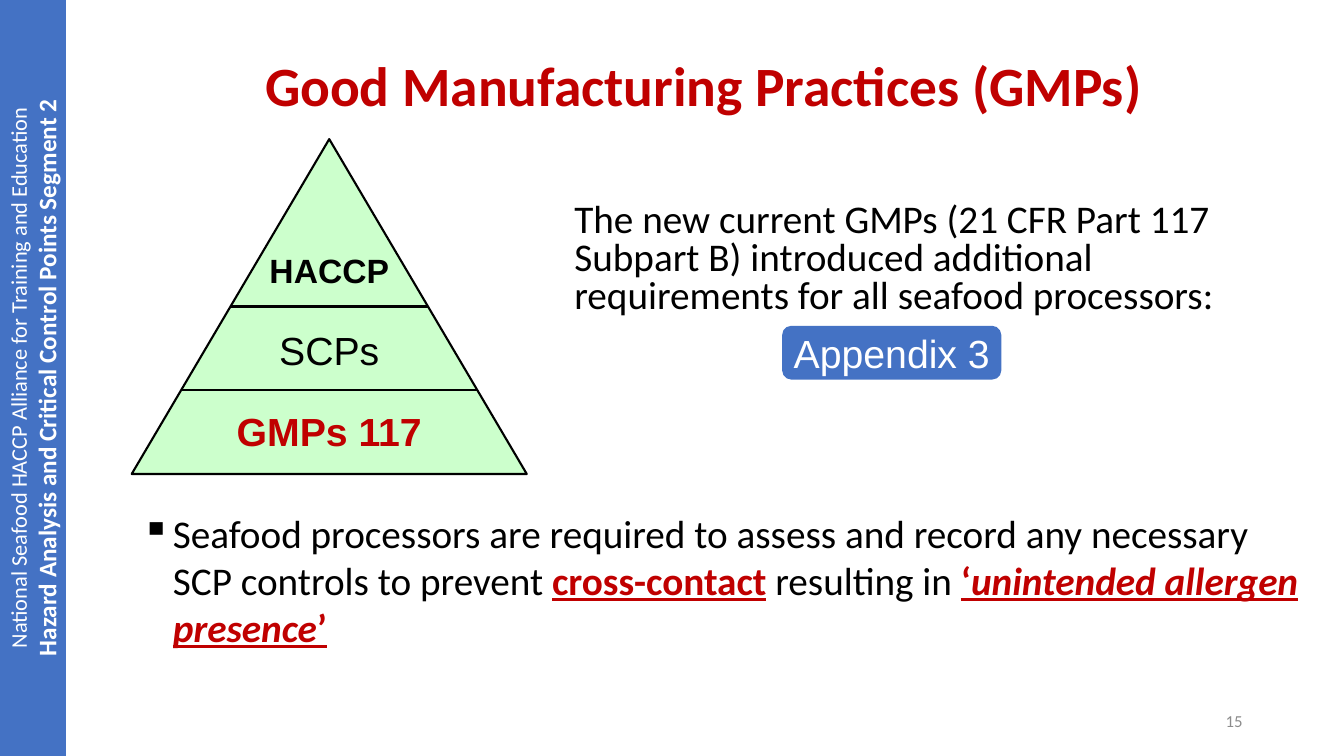
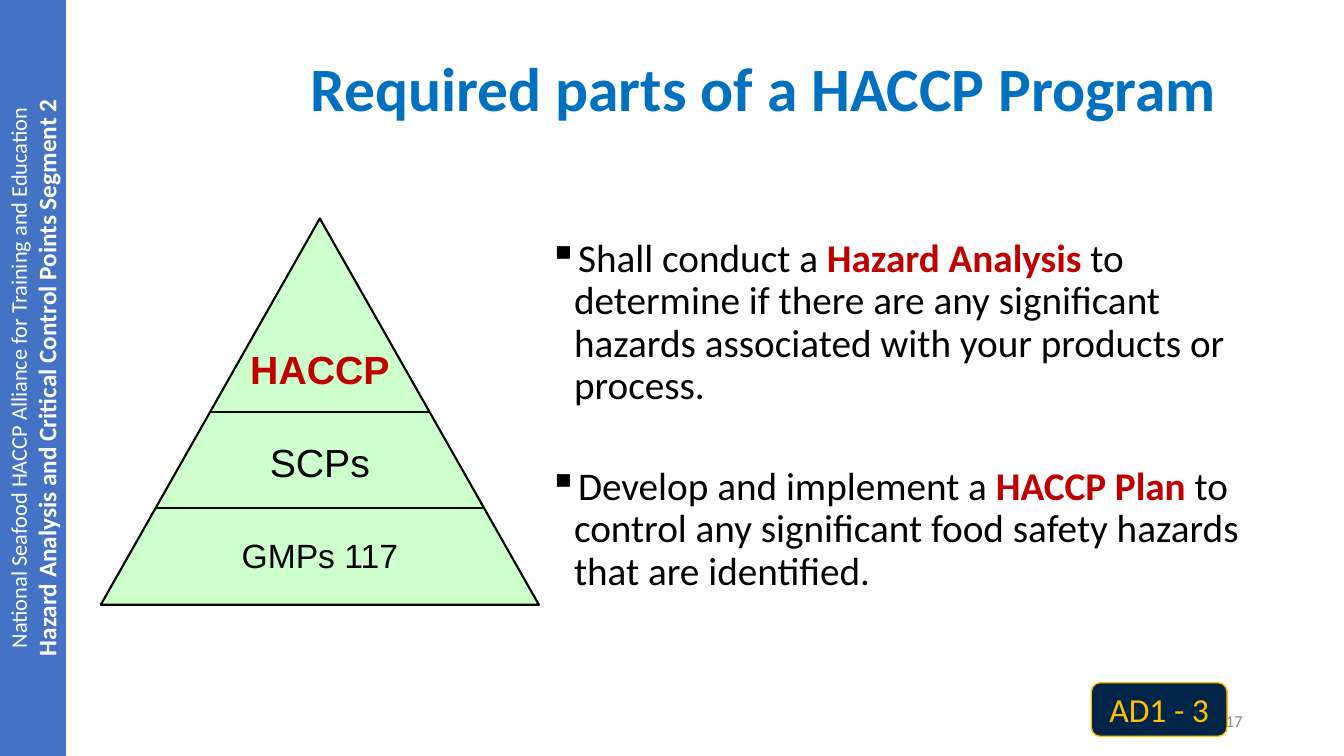
import dataclasses

import pptx
import pptx.dml.color
import pptx.enum.shapes
import pptx.enum.text
import pptx.oxml.ns
import pptx.oxml.xmlchemy
import pptx.util
from lxml import etree


@dataclasses.dataclass(frozen=True)
class Theme:
    blue: str = "4472C4"
    title_blue: str = "0070C0"
    navy: str = "012548"
    gold: str = "FFC000"
    red: str = "C00000"
    green: str = "CCFFCC"
    black: str = "000000"
    white: str = "FFFFFF"
    gray: str = "8C8C8C"
    text_font: str = "Calibri"
    label_font: str = "Arial"
    body: float = 28
    small_label: float = 24
    band_heading: float = 18
    band_line: float = 16
    number: float = 12


theme = Theme()
ALIGN = pptx.enum.text.PP_ALIGN
ANCHOR = pptx.enum.text.MSO_ANCHOR
SHAPE = pptx.enum.shapes.MSO_SHAPE
qn = pptx.oxml.ns.qn

deck = pptx.Presentation()
deck.slide_width = pptx.util.Inches(13.33)
deck.slide_height = pptx.util.Inches(7.5)
layout = deck.slide_layouts[5]


def grid(left, top, width, height):
    """Turn percentages of the slide's width and height into lengths."""
    column, row = deck.slide_width / 100, deck.slide_height / 100
    return [pptx.util.Emu(round(length * unit)) for length, unit in
            zip((left, top, width, height), (column, row, column, row))]


def write(box, paragraphs, base, anchor=ANCHOR.TOP, wrap=True, bullet_indent=0, **layout_values):
    """Fill a box with paragraphs, each a list of (text, format changes)."""
    frame = box.text_frame
    frame.word_wrap, frame.vertical_anchor = wrap, anchor
    gap = layout_values.pop("gap", 0)
    for index, spans in enumerate(paragraphs):
        para = frame.add_paragraph() if index else frame.paragraphs[0]
        if bullet_indent:
            properties = para._p.get_or_add_pPr()
            indent = pptx.util.Inches(bullet_indent)
            properties.set("marL", str(indent))
            properties.set("indent", str(-indent))
            etree.SubElement(properties, qn("a:buChar")).set("char", "▪")
        for name, value in layout_values.items():
            setattr(para, name, value)
        para.space_before = pptx.util.Pt(gap if index else 0)
        for text, changes in spans:
            span = para.add_run()
            span.text = text
            values = {"name": theme.text_font, "size": theme.body, "color": theme.black,
                      **base, **changes}
            span.font.color.rgb = pptx.dml.color.RGBColor.from_string(values.pop("color"))
            values["size"] = pptx.util.Pt(values["size"])
            for name, value in values.items():
                setattr(span.font, name, value)


red_bold = {"color": theme.red, "bold": True}
key_term = {**red_bold, "underline": True}

slides = [
    {
        "title": "Good Manufacturing Practices (GMPs)",
        "title_at": (16.7, 6.7, 71.3, 10),
        "title_format": {"size": 39.6, "color": theme.red},
        "pyramid_at": (9.8, 18.4, 29.4, 44.3),
        "labels": [("HACCP", {"size": theme.small_label, "bold": True}),
                   ("SCPs", {}), ("GMPs 117", red_bold)],
        "texts": [
            {"at": (42, 26.3, 49.9, 17), "line_spacing": 0.8, "paragraphs": [[
                ("The new current GMPs (21 CFR Part 117 Subpart B) introduced additional "
                 "requirements for all seafood processors:", {})]]},
            {"at": (9.8, 66.7, 88.3, 21), "bullet_indent": 0.31, "paragraphs": [[
                ("Seafood processors are required to assess and record any necessary "
                 "SCP controls to prevent ", {}),
                ("cross-contact", key_term),
                (" resulting in ", {}),
                ("‘", key_term),
                ("unintended allergen presence", {**key_term, "italic": True}),
                ("’", key_term)]]},
        ],
        "number": "15",
        "badge": {"at": (58.2, 43.1, 16.3, 7.1), "text": "Appendix 3", "fill": theme.blue,
                  "line": None,
                  "format": {"name": theme.label_font, "color": theme.white}},
    },
    {
        "title": "Required parts of a HACCP Program",
        "title_at": (18.7, 3.7, 76.3, 16.7),
        "title_format": {"size": 44, "color": theme.title_blue},
        "pyramid_at": (7.5, 28.9, 32.6, 51.1),
        "labels": [("HACCP", red_bold), ("SCPs", {}),
                   ("GMPs 117", {"size": theme.small_label})],
        "texts": [
            {"at": (40.1, 30.9, 54.1, 52.7), "bullet_indent": 0.25, "line_spacing": 0.9,
             "gap": 42, "paragraphs": [
                 [("Shall conduct a ", {}), ("Hazard Analysis ", red_bold),
                  ("to determine if there are any significant hazards associated with "
                   "your products or process.", {})],
                 [("Develop and implement a ", {}), ("HACCP Plan ", red_bold),
                  ("to control any significant food safety hazards that are identified.",
                   {})]]},
        ],
        "number": "17",
        "badge": {"at": (81.2, 90.3, 10.1, 7.1), "text": "AD1 - 3", "fill": theme.navy,
                  "line": theme.gold,
                  "format": {"size": 24, "color": theme.gold}},
    },
]

band = None
for content in slides:
    page = deck.slides.add_slide(layout)

    # Side band, drawn once and kept on the shared layout
    if band is None:
        band = page.shapes.add_shape(SHAPE.RECTANGLE, *grid(0, 0, 4.9, 100))
        band.shadow.inherit = False
        band.fill.solid()
        band.fill.fore_color.rgb = pptx.dml.color.RGBColor.from_string(theme.blue)
        band.line.fill.background()
        write(band, [
            [("National Seafood HACCP Alliance for Training and Education",
              {"size": theme.band_line})],
            [("Hazard Analysis and Critical Control Points Segment 2",
              {"size": theme.band_heading, "bold": True})],
        ], {"color": theme.white}, anchor=ANCHOR.MIDDLE, alignment=ALIGN.CENTER)
        band.element.find(".//" + qn("a:bodyPr")).set("vert", "vert270")
        band.element.find(".//" + qn("p:cNvPr")).set("id", "99")
        layout.shapes.element.append(band.element)

    # Title
    title = page.shapes.title
    title.left, title.top, title.width, title.height = grid(*content["title_at"])
    write(title, [[(content["title"], {"bold": True})]], content["title_format"],
          anchor=ANCHOR.MIDDLE, alignment=ALIGN.CENTER, line_spacing=0.9)

    # Body text
    for text in content["texts"]:
        options = dict(text)
        box = page.shapes.add_textbox(*grid(*options.pop("at")))
        write(box, options.pop("paragraphs"), {}, **options)

    # Page number
    number = page.shapes.add_textbox(*grid(70.7, 92.7, 22.5, 5.3))
    write(number, [[(content["number"], {})]], {"size": theme.number, "color": theme.gray},
          anchor=ANCHOR.MIDDLE, alignment=ALIGN.RIGHT)

    # Pyramid: outline, dividers at half and three quarters, one label per tier
    left, top, width, height = content["pyramid_at"]
    pyramid = page.shapes.add_group_shape().shapes
    outline = pyramid.add_shape(SHAPE.ISOSCELES_TRIANGLE, *grid(left, top, width, height))
    outline.shadow.inherit = False
    outline.fill.solid()
    outline.fill.fore_color.rgb = pptx.dml.color.RGBColor.from_string(theme.green)
    edges = [outline]
    for depth in (0.75, 0.5):
        start_x, y, span_x, _ = grid(left + width * (1 - depth) / 2, top + height * depth,
                                     width * depth, 0)
        divider = pyramid.add_connector(pptx.enum.shapes.MSO_CONNECTOR.STRAIGHT,
                                        start_x, y, start_x + span_x, y)
        etree.SubElement(divider.element.find(qn("p:spPr")), qn("a:effectLst"))
        edges.append(divider)
    for edge in edges:
        edge.line.color.rgb = pptx.dml.color.RGBColor.from_string(theme.black)
        edge.line.width = pptx.util.Pt(1.5)
    for (label, changes), depth in zip(content["labels"], (0.39, 0.63, 0.87)):
        tier = pyramid.add_textbox(*grid(left + width * 0.15, top + height * depth - 3.8,
                                         width * 0.7, 7.6))
        write(tier, [[(label, changes)]], {"name": theme.label_font},
              anchor=ANCHOR.MIDDLE, alignment=ALIGN.CENTER)

    # Reference badge
    badge = content["badge"]
    button = page.shapes.add_shape(SHAPE.ROUNDED_RECTANGLE, *grid(*badge["at"]))
    button.shadow.inherit = False
    button.fill.solid()
    button.fill.fore_color.rgb = pptx.dml.color.RGBColor.from_string(badge["fill"])
    if badge["line"]:
        button.line.color.rgb = pptx.dml.color.RGBColor.from_string(badge["line"])
        button.line.width = pptx.util.Pt(1)
    else:
        button.line.fill.background()
    write(button, [[(badge["text"], {})]], badge["format"], anchor=ANCHOR.MIDDLE,
          wrap=False, alignment=ALIGN.CENTER)

deck.save("out.pptx")
